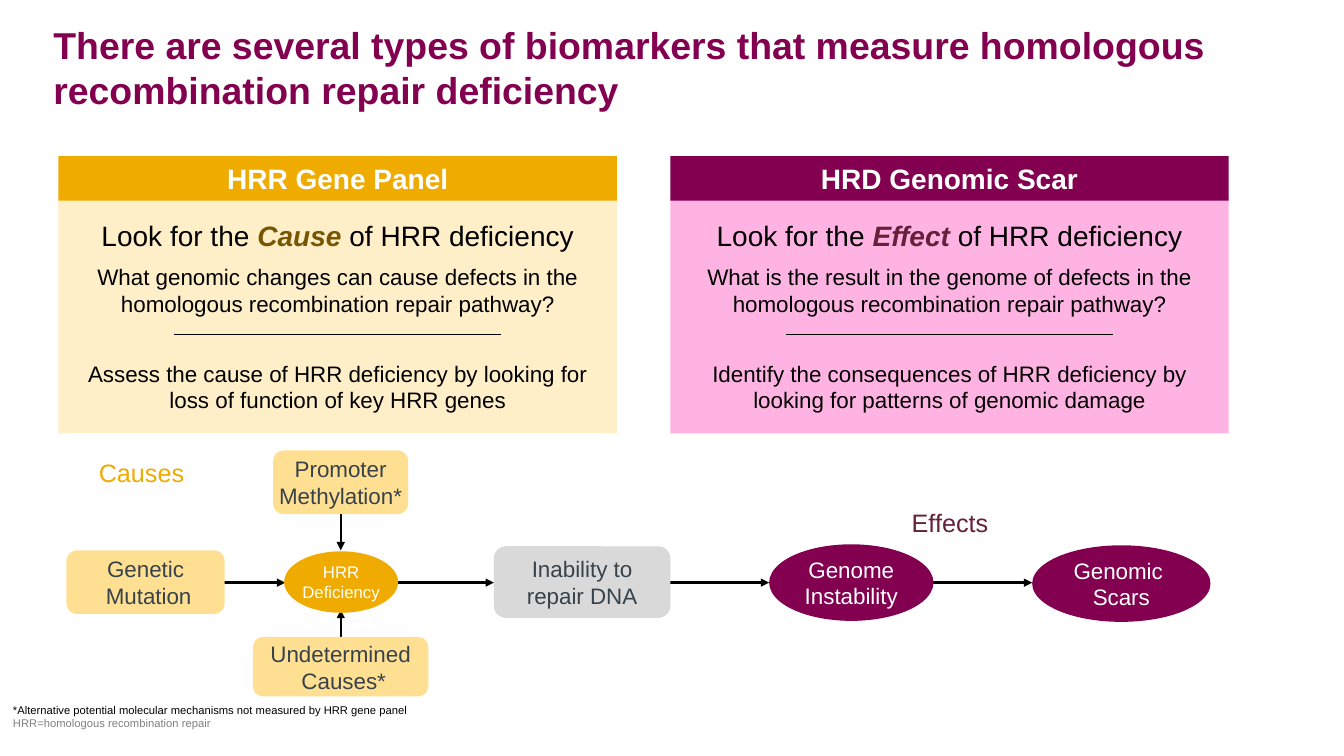
from dataclasses import dataclass

from lxml.etree import SubElement
from pptx import Presentation
from pptx.dml.color import RGBColor
from pptx.enum.shapes import MSO_CONNECTOR, MSO_SHAPE
from pptx.enum.text import MSO_ANCHOR, PP_ALIGN
from pptx.oxml.ns import qn
from pptx.util import Pt


@dataclass(frozen=True)
class Theme:
    font: str = "Arial"
    plum: str = "830051"
    gold: str = "F0AB00"
    wine: str = "66203A"
    brown: str = "785500"
    cream: str = "FFEFC9"
    pink: str = "FFB3E2"
    sand: str = "FFE093"
    silver: str = "D9D9D9"
    slate: str = "37424A"
    gray: str = "808080"
    black: str = "000000"
    white: str = "FFFFFF"
    title_size: float = 26.7
    heading_size: float = 20
    label_size: float = 18
    body_size: float = 16
    small_size: float = 12
    note_size: float = 8


THEME = Theme()
PANEL_WIDTH = 398.9
FLOW_Y = 416.2
CAUSE_X = 243.4


def add_run(paragraph, text, size, color, bold=False, italic=False):
    run = paragraph.add_run()
    run.text = text
    font = run.font
    font.name, font.size = THEME.font, Pt(size)
    font.bold, font.italic = bold, italic
    font.color.rgb = RGBColor.from_string(color)


def prepare_frame(shape, anchor, wrap=True, insets=(7.2, 3.6)):
    frame = shape.text_frame
    frame.word_wrap = wrap
    frame.vertical_anchor = anchor
    frame.margin_left = frame.margin_right = Pt(insets[0])
    frame.margin_top = frame.margin_bottom = Pt(insets[1])
    return frame


def add_paragraph(frame, first, align=PP_ALIGN.CENTER, before=0, after=0):
    paragraph = frame.paragraphs[0] if first else frame.add_paragraph()
    paragraph.alignment = align
    if before:
        paragraph.space_before = Pt(before)
    paragraph.space_after = Pt(after)
    return paragraph


def add_filled_shape(slide, kind, box, fill):
    shape = slide.shapes.add_shape(kind, *map(Pt, box))
    shape.shadow.inherit = False
    shape.fill.solid()
    shape.fill.fore_color.rgb = RGBColor.from_string(fill)
    shape.line.fill.background()
    return shape


def add_text(slide, box, lines, size, anchor, align=PP_ALIGN.LEFT, bold=False,
             insets=(7.2, 3.6), line_spacing=None):
    shape = slide.shapes.add_textbox(*map(Pt, box))
    frame = prepare_frame(shape, anchor, insets=insets)
    for index, (text, color) in enumerate(lines):
        paragraph = add_paragraph(frame, index == 0, align)
        if line_spacing:
            paragraph.line_spacing = line_spacing
        add_run(paragraph, text, size, color, bold)


def add_line(slide, start, end, width, arrow=False):
    connector = slide.shapes.add_connector(MSO_CONNECTOR.STRAIGHT, *map(Pt, start + end))
    connector.line.color.rgb = RGBColor.from_string(THEME.black)
    connector.line.width = Pt(width)
    if arrow:
        SubElement(connector.line._get_or_add_ln(), qn("a:tailEnd"), type="triangle")
    SubElement(connector._element.spPr, qn("a:effectLst"))


def add_panel(slide, left, heading, header_fill, body_fill, focus, focus_color, question, answer):
    body = add_filled_shape(slide, MSO_SHAPE.ROUNDED_RECTANGLE,
                            (left, 141.8, PANEL_WIDTH, 167.8), body_fill)
    body.adjustments[0] = 0
    frame = prepare_frame(body, MSO_ANCHOR.MIDDLE, insets=(5, 2.9))
    lead = add_paragraph(frame, True, after=8)
    add_run(lead, "Look for the ", THEME.heading_size, THEME.black)
    add_run(lead, focus, THEME.heading_size, focus_color, True, True)
    add_run(lead, " of HRR deficiency", THEME.heading_size, THEME.black)
    add_run(add_paragraph(frame, False), question, THEME.body_size, THEME.black)
    add_run(add_paragraph(frame, False, before=30.4, after=12), answer,
            THEME.body_size, THEME.black)

    header = add_filled_shape(slide, MSO_SHAPE.RECTANGLE,
                              (left, 111.6, PANEL_WIDTH, 31.7), header_fill)
    frame = prepare_frame(header, MSO_ANCHOR.MIDDLE, insets=(5, 2.9))
    add_run(add_paragraph(frame, True), heading, THEME.heading_size, THEME.white, True)
    add_line(slide, (left + 82.8, 239), (left + 316.1, 239), 1)


def add_node(slide, kind, box, fill, color, lines, size=THEME.body_size):
    shape = add_filled_shape(slide, kind, box, fill)
    frame = prepare_frame(shape, MSO_ANCHOR.MIDDLE, wrap=False)
    for index, text in enumerate(lines):
        add_run(add_paragraph(frame, index == 0), text, size, color)


def add_pathway(slide):
    for start, end in ((124.6, 203.8), (267.1, 352.8), (478.8, 549.4), (666.7, 737.3)):
        add_line(slide, (start, FLOW_Y), (end, FLOW_Y), 1.75, True)
    for start, end in ((348.5, 393.1), (480.2, 435.6)):
        add_line(slide, (CAUSE_X, start), (CAUSE_X, end), 1.75, True)

    rounded, oval = MSO_SHAPE.ROUNDED_RECTANGLE, MSO_SHAPE.OVAL
    for box, lines in (
        ((47.5, 393.1, 113, 45.4), ("Genetic", " Mutation")),
        ((195.1, 321.8, 96.5, 45.4), ("Promoter", "Methylation*")),
        ((180.7, 455, 125.3, 42.5), ("Undetermined", " Causes*")),
    ):
        add_node(slide, rounded, box, THEME.sand, THEME.slate, lines)
    add_node(slide, oval, (203, 393.8, 81.4, 43.9), THEME.gold, THEME.white,
             ("HRR", "Deficiency"), THEME.small_size)
    add_node(slide, rounded, (352.8, 390.2, 126, 51.1), THEME.silver, THEME.slate,
             ("Inability to", "repair DNA"))
    add_node(slide, oval, (549.4, 388.8, 117.4, 54.7), THEME.plum, THEME.white,
             ("Genome", "Instability"))
    add_node(slide, oval, (737.3, 389.5, 127.4, 54.7), THEME.plum, THEME.white,
             ("Genomic ", "Scars"))

    for left, top, text, color in ((59, 320.4, "Causes", THEME.gold),
                                   (636.5, 355.7, "Effects", THEME.wine)):
        add_text(slide, (left, top, 84.2, 32.4), [(text, color)], THEME.label_size,
                 MSO_ANCHOR.TOP, PP_ALIGN.CENTER, line_spacing=1.14)


def main():
    presentation = Presentation()
    presentation.slide_width, presentation.slide_height = Pt(960), Pt(540)
    slide = presentation.slides.add_slide(presentation.slide_layouts[6])

    add_text(slide, (33.1, 13, 840.2, 69.8),
             [("There are several types of biomarkers that measure homologous "
               "recombination repair deficiency", THEME.plum)],
             THEME.title_size, MSO_ANCHOR.MIDDLE, bold=True, insets=(5, 2.9))
    add_panel(slide, 41.8, "HRR Gene Panel", THEME.gold, THEME.cream, "Cause", THEME.brown,
              "What genomic changes can cause defects in the homologous "
              "recombination repair pathway?",
              "Assess the cause of HRR deficiency by looking for loss of function "
              "of key HRR genes")
    add_panel(slide, 478.8, "HRD Genomic Scar", THEME.plum, THEME.pink, "Effect", THEME.wine,
              "What is the result in the genome of defects in the homologous "
              "recombination repair pathway?",
              "Identify the consequences of HRR deficiency by looking for patterns "
              "of genomic damage")
    add_pathway(slide)
    add_text(slide, (2.2, 504.7, 659.5, 20.2),
             [("*Alternative potential molecular mechanisms not measured by HRR gene panel",
               THEME.black),
              ("HRR=homologous recombination repair", THEME.gray)],
             THEME.note_size, MSO_ANCHOR.BOTTOM)
    presentation.save("out.pptx")


if __name__ == "__main__":
    main()
